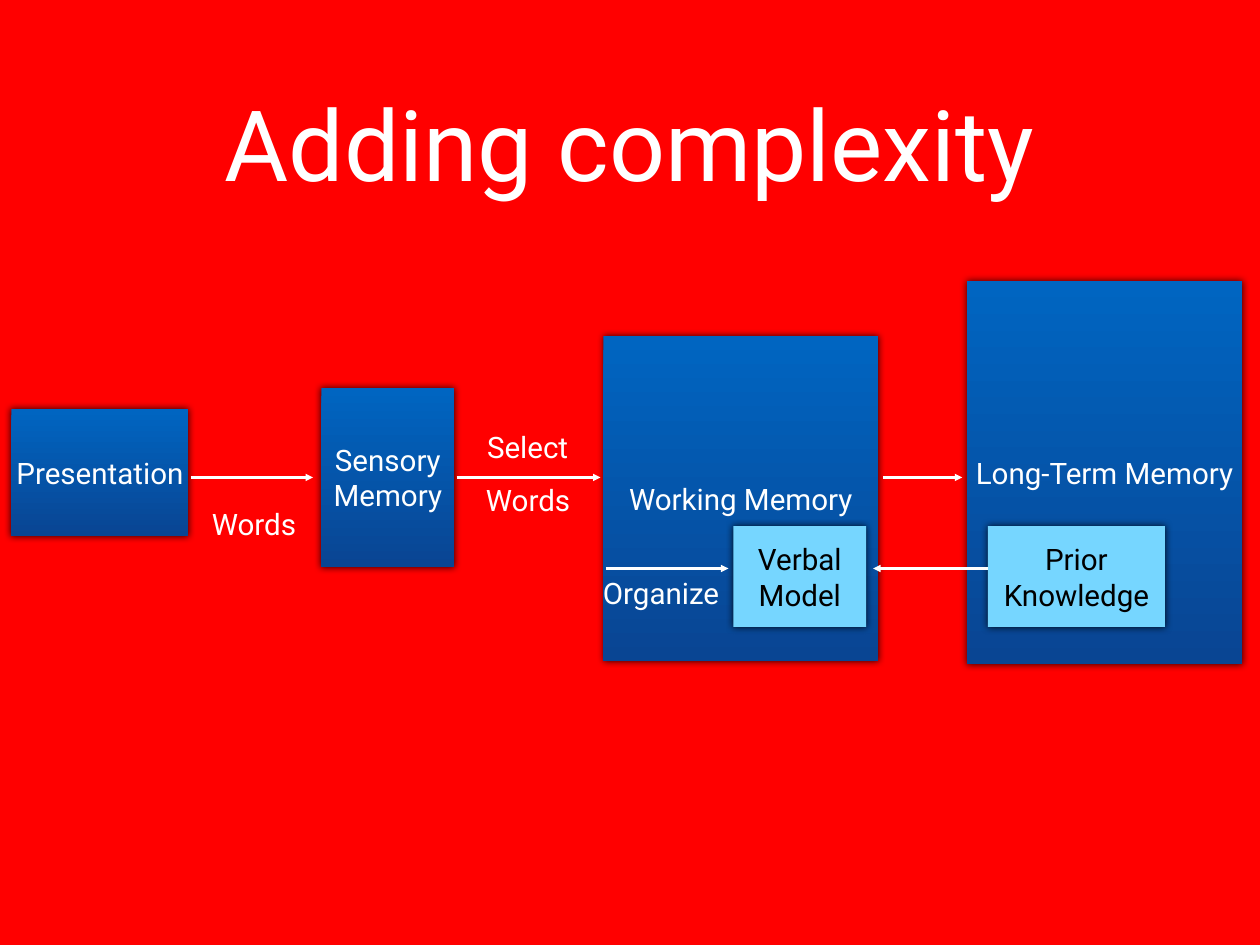
from dataclasses import dataclass

from lxml import etree
from pptx import Presentation
from pptx.dml.color import RGBColor
from pptx.enum.shapes import MSO_CONNECTOR, MSO_SHAPE
from pptx.enum.text import MSO_ANCHOR, MSO_AUTO_SIZE, PP_ALIGN
from pptx.oxml import parse_xml
from pptx.oxml.ns import nsdecls, qn
from pptx.shapes.autoshape import Shape
from pptx.shapes.shapetree import SlideShapes
from pptx.util import Inches, Pt

RECT = MSO_SHAPE.RECTANGLE
STRAIGHT = MSO_CONNECTOR.STRAIGHT
MIDDLE = MSO_ANCHOR.MIDDLE
CENTER = PP_ALIGN.CENTER
GROW = MSO_AUTO_SIZE.SHAPE_TO_FIT_TEXT

SLIDE_W, SLIDE_H = Inches(14.22), Inches(10.67)
COLS, ROWS = 128, 96
FLOW_ROW, MODEL_ROW = 48.5, 57.75
LABEL_ROWS = 4.6


@dataclass(frozen=True)
class Theme:
    background: str = "FF0000"
    store_top: str = "0065C1"
    store_bottom: str = "094593"
    model: str = "76D6FF"
    light: str = "FFFFFF"
    dark: str = "000000"
    font: str = "Roboto"
    title_pt: int = 80
    body_pt: int = 24
    line_pt: int = 2
    shadow_pt: int = 6
    side_inset: float = 0.04
    end_inset: float = 0.06


@dataclass(frozen=True)
class Box:
    text: str
    col: float
    row: float
    cols: float
    rows: float
    is_model: bool = False


@dataclass(frozen=True)
class Arrow:
    start_col: float
    end_col: float
    row: float


@dataclass(frozen=True)
class Label:
    text: str
    col: float
    row: float
    cols: float
    rows: float = LABEL_ROWS


THEME = Theme()

TITLE = Label("Adding complexity", 9.4, 4, 109.2, 20.9)

BOXES = [
    Box("Working Memory", 61.3, 34.1, 27.9, 33.1),
    Box("Long-Term Memory", 98.25, 28.5, 27.9, 39),
    Box("Sensory Memory", 32.65, 39.4, 13.5, 18.2),
    Box("Presentation", 1.15, 41.55, 18, 12.95),
    Box("Prior Knowledge", 100.35, 53.45, 18, 10.25, True),
    Box("Verbal Model", 74.5, 53.45, 13.5, 10.25, True),
]

ARROWS = [
    Arrow(19.4, 31.8, FLOW_ROW),
    Arrow(46.4, 61, FLOW_ROW),
    Arrow(89.7, 97.75, FLOW_ROW),
    Arrow(61.55, 74, MODEL_ROW),
    Arrow(100.35, 88.7, MODEL_ROW),
]

LABELS = [
    Label("Words", 20.95, 50.9, 9.7),
    Label("Select", 48.85, 43.1, 9.5),
    Label("Words", 48.8, 48.45, 9.7),
    Label("Organize", 60.4, 57.95, 13.5),
]


def x(cols: float) -> int:
    return round(SLIDE_W * cols / COLS)


def y(rows: float) -> int:
    return round(SLIDE_H * rows / ROWS)


def write_text(sp: Shape, text: str, size: int, color: str, wrap: bool = True) -> None:
    tf = sp.text_frame
    tf.word_wrap = wrap
    tf.vertical_anchor = MIDDLE
    tf.margin_left = tf.margin_right = Inches(THEME.side_inset)
    tf.margin_top = tf.margin_bottom = Inches(THEME.end_inset)
    p = tf.paragraphs[0]
    p.text = text
    p.alignment = CENTER
    p.font.name = THEME.font
    p.font.size = Pt(size)
    p.font.color.rgb = RGBColor.from_string(color)


def add_glow_shadow(sp: Shape) -> None:
    sp.shadow.inherit = False
    effects = sp._element.spPr.find(qn("a:effectLst"))
    effects.append(parse_xml(
        f'<a:outerShdw {nsdecls("a")} blurRad="{Pt(THEME.shadow_pt)}" dist="0" '
        f'dir="18900000" rotWithShape="0"><a:srgbClr val="{THEME.dark}">'
        '<a:alpha val="80000"/></a:srgbClr></a:outerShdw>'
    ))


def draw_box(shapes: SlideShapes, box: Box) -> None:
    sp = shapes.add_shape(RECT, x(box.col), y(box.row), x(box.cols), y(box.rows))
    if box.is_model:
        sp.fill.solid()
        sp.fill.fore_color.rgb = RGBColor.from_string(THEME.model)
    else:
        sp.fill.gradient()
        sp.fill.gradient_angle = 270
        colors = (THEME.store_top, THEME.store_bottom)
        for position, (stop, color) in enumerate(zip(sp.fill.gradient_stops, colors)):
            stop.position = position
            stop.color.rgb = RGBColor.from_string(color)
    sp.line.fill.background()
    add_glow_shadow(sp)
    write_text(sp, box.text, THEME.body_pt, THEME.dark if box.is_model else THEME.light)


def draw_arrow(shapes: SlideShapes, arrow: Arrow) -> None:
    row = y(arrow.row)
    line = shapes.add_connector(STRAIGHT, x(arrow.start_col), row, x(arrow.end_col), row)
    line.line.width = Pt(THEME.line_pt)
    line.line.color.rgb = RGBColor.from_string(THEME.light)
    etree.SubElement(line.line._get_or_add_ln(), qn("a:tailEnd"), type="triangle")
    etree.SubElement(line._element.spPr, qn("a:effectLst"))


def draw_label(shapes: SlideShapes, label: Label, size: int, wrap: bool) -> None:
    sp = shapes.add_textbox(x(label.col), y(label.row), x(label.cols), y(label.rows))
    write_text(sp, label.text, size, THEME.light, wrap)
    if not wrap:
        sp.text_frame.auto_size = GROW


def main() -> None:
    prs = Presentation()
    prs.slide_width, prs.slide_height = SLIDE_W, SLIDE_H
    s = prs.slides.add_slide(prs.slide_layouts[6])
    s.background.fill.solid()
    s.background.fill.fore_color.rgb = RGBColor.from_string(THEME.background)
    draw_label(s.shapes, TITLE, THEME.title_pt, True)
    for box in BOXES:
        draw_box(s.shapes, box)
    for arrow in ARROWS:
        draw_arrow(s.shapes, arrow)
    for label in LABELS:
        draw_label(s.shapes, label, THEME.body_pt, False)
    prs.save("out.pptx")


if __name__ == "__main__":
    main()
